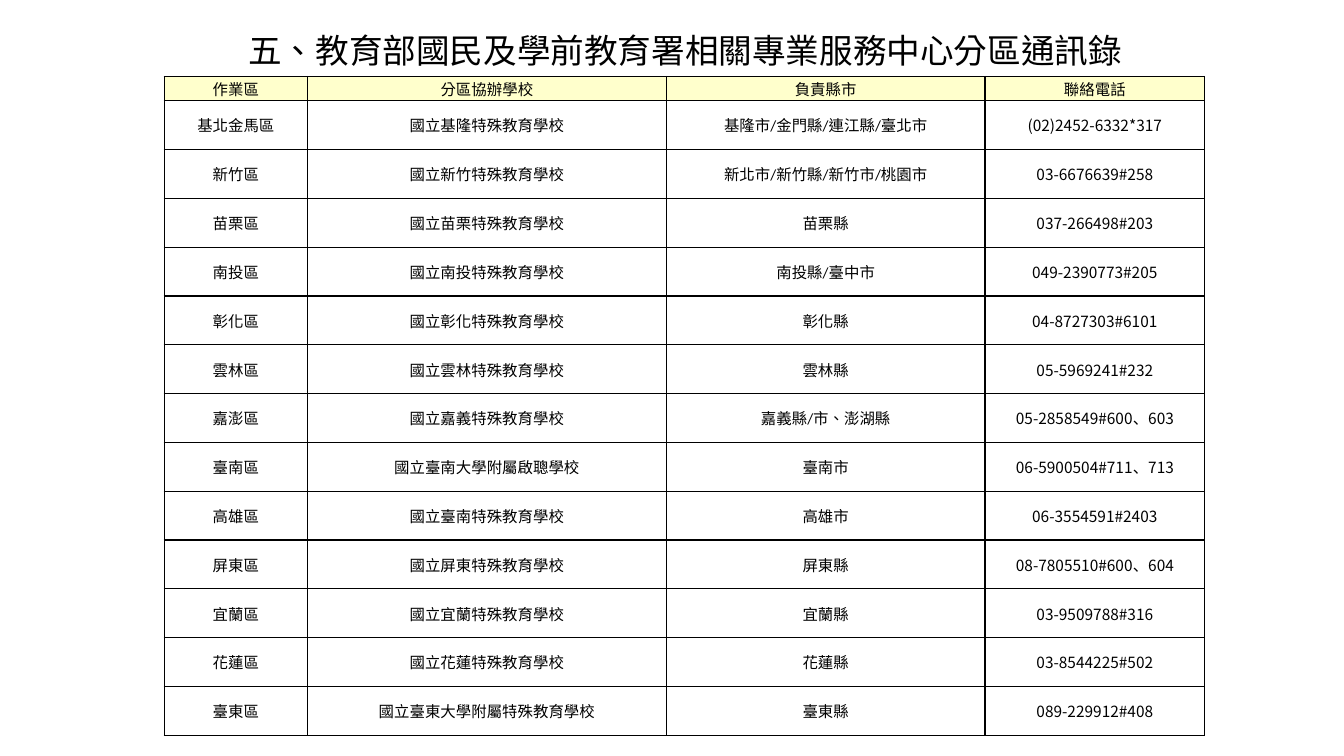
from lxml.etree import SubElement
from pptx import Presentation
from pptx.dml.color import RGBColor as Rgb
from pptx.enum.lang import MSO_LANGUAGE_ID as Language
from pptx.enum.text import MSO_ANCHOR as Anchor, PP_ALIGN as Align
from pptx.oxml import parse_xml
from pptx.oxml.ns import nsdecls, qn
from pptx.util import Inches, Pt

COLORS = {"ink": "000000", "header": "FFFFCC", "page": "FFFFFF"}
CJK = "Noto Sans CJK SC"
LATIN = "Calibri"
TITLE = "五、教育部國民及學前教育署相關專業服務中心分區通訊錄"
HEADINGS = ("作業區", "分區協辦學校", "負責縣市", "聯絡電話")
CONTACTS = (
    ("基北金馬區", "國立基隆特殊教育學校", "基隆市/金門縣/連江縣/臺北市", "(02)2452-6332*317"),
    ("新竹區", "國立新竹特殊教育學校", "新北市/新竹縣/新竹市/桃園市", "03-6676639#258"),
    ("苗栗區", "國立苗栗特殊教育學校", "苗栗縣", "037-266498#203"),
    ("南投區", "國立南投特殊教育學校", "南投縣/臺中市", "049-2390773#205"),
    ("彰化區", "國立彰化特殊教育學校", "彰化縣", "04-8727303#6101"),
    ("雲林區", "國立雲林特殊教育學校", "雲林縣", "05-5969241#232"),
    ("嘉澎區", "國立嘉義特殊教育學校", "嘉義縣/市、澎湖縣", "05-2858549#600、603"),
    ("臺南區", "國立臺南大學附屬啟聰學校", "臺南市", "06-5900504#711、713"),
    ("高雄區", "國立臺南特殊教育學校", "高雄市", "06-3554591#2403"),
    ("屏東區", "國立屏東特殊教育學校", "屏東縣", "08-7805510#600、604"),
    ("宜蘭區", "國立宜蘭特殊教育學校", "宜蘭縣", "03-9509788#316"),
    ("花蓮區", "國立花蓮特殊教育學校", "花蓮縣", "03-8544225#502"),
    ("臺東區", "國立臺東大學附屬特殊教育學校", "臺東縣", "089-229912#408"),
)
COLUMN_WIDTHS = (1.42, 3.56, 3.16, 2.18)
HEADER_HEIGHT = 0.24


def write_text(frame, text, size=11, font=LATIN, color="ink", align=Align.CENTER):
    para = frame.paragraphs[0]
    para.alignment = align
    span = para.add_run()
    span.text = text
    span.font.size = Pt(size)
    span.font.bold = False
    span.font.name = font
    span.font.language_id = Language.TRADITIONAL_CHINESE
    span.font.color.rgb = Rgb.from_string(COLORS[color])
    SubElement(span.font._element, qn("a:ea")).set("typeface", CJK)


def draw_borders(cell, width=1, color="ink"):
    properties = cell._tc.get_or_add_tcPr()
    for position, side in enumerate(("lnL", "lnR", "lnT", "lnB")):
        border = parse_xml(
            f'<a:{side} {nsdecls("a")} w="{Pt(width)}"><a:solidFill>'
            f'<a:srgbClr val="{COLORS[color]}"/></a:solidFill></a:{side}>'
        )
        properties.insert(position, border)


def fill_cell(cell, text, font, background):
    cell.vertical_anchor = Anchor.MIDDLE
    cell.margin_left = cell.margin_right = Inches(0.06)
    cell.margin_top = cell.margin_bottom = 0
    cell.fill.solid()
    cell.fill.fore_color.rgb = Rgb.from_string(COLORS[background])
    draw_borders(cell)
    write_text(cell.text_frame, text, font=font)


def add_title(page, left, top, width, height):
    box = page.shapes.add_textbox(Inches(left), Inches(top), Inches(width), Inches(height))
    box.text_frame.word_wrap = True
    box.text_frame.vertical_anchor = Anchor.MIDDLE
    write_text(box.text_frame, TITLE, size=24, font=CJK)


def add_directory(page, left, top, width, height):
    rows = (HEADINGS, *CONTACTS)
    table = page.shapes.add_table(
        len(rows), len(HEADINGS), Inches(left), Inches(top), Inches(width), Inches(height)
    ).table
    table.first_row = table.horz_banding = False
    for column, share in zip(table.columns, COLUMN_WIDTHS):
        column.width = Inches(width * share / sum(COLUMN_WIDTHS))
    contact_height = (height - HEADER_HEIGHT) / len(CONTACTS)
    for row_index, values in enumerate(rows):
        is_header = row_index == 0
        table.rows[row_index].height = Inches(HEADER_HEIGHT if is_header else contact_height)
        for column_index, value in enumerate(values):
            is_phone = not is_header and column_index == len(HEADINGS) - 1
            fill_cell(
                table.cell(row_index, column_index),
                value,
                font=CJK if is_phone else LATIN,
                background="header" if is_header else "page",
            )


def main():
    deck = Presentation()
    deck.slide_width, deck.slide_height = Inches(13.33), Inches(7.5)
    page = deck.slides.add_slide(deck.slide_layouts[6])
    add_title(page, 1.81, 0.25, 9.97, 0.5)
    add_directory(page, 1.63, 0.76, 10.32, 6.54)
    deck.save("out.pptx")


if __name__ == "__main__":
    main()
